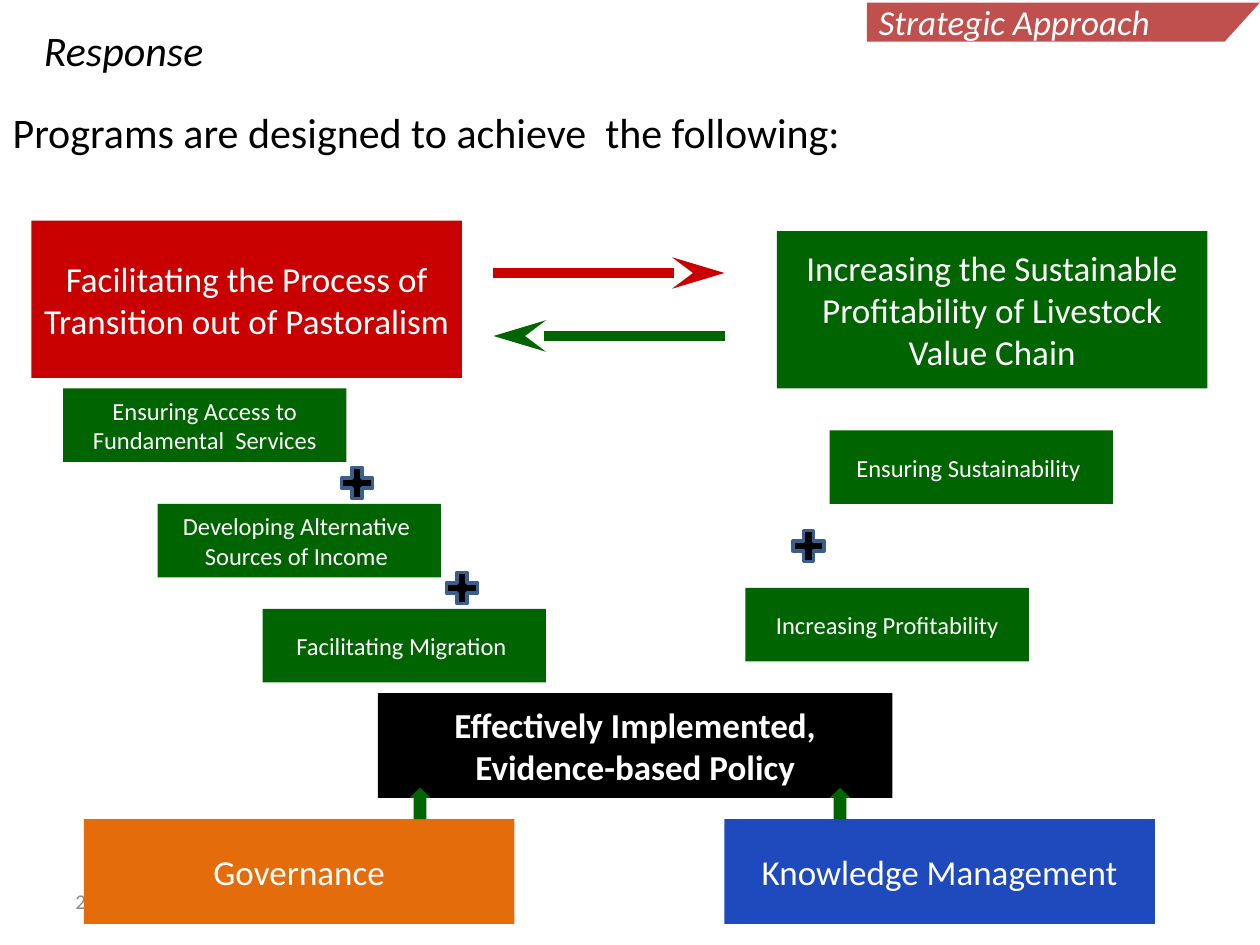
from lxml import etree
from pptx import Presentation
from pptx.dml.color import RGBColor
from pptx.enum.shapes import MSO_CONNECTOR, MSO_SHAPE
from pptx.enum.text import MSO_ANCHOR, PP_ALIGN
from pptx.oxml.ns import qn
from pptx.util import Inches, Pt

RECT, PLUS, LEFT_ARROW = MSO_SHAPE.RECTANGLE, MSO_SHAPE.MATH_PLUS, MSO_SHAPE.LEFT_ARROW
MIDDLE, TOP = MSO_ANCHOR.MIDDLE, MSO_ANCHOR.TOP
LEFT, CENTER = PP_ALIGN.LEFT, PP_ALIGN.CENTER

COLORS = {"black": "000000", "white": "FFFFFF", "gray": "8C8C8C", "ribbon": "C0504D",
          "blue": "1E4ABD", "orange": "E46C0A", "red": "C80000", "green": "006400",
          "outline": "3A5F8C"}

# Places are in cells of a 120 x 90 grid, 12 cells to the inch.
GRID = 12
TITLE = "Programs are designed to achieve  the following:"
BIG, GOAL, SMALL = (41, 10), (41, 15), (27, 7)
BOXES = [  # text, column, row, size, fill, font
    ("Effectively Implemented, Evidence-based Policy", 36, 66, (49, 10), "black",
     {"size": Pt(20), "bold": True}),
    ("Knowledge Management", 69, 78, BIG, "blue", {"size": Pt(20)}),
    ("Governance", 8, 78, BIG, "orange", {"size": Pt(20)}),
    ("Facilitating the Process of Transition out of Pastoralism", 3, 21, GOAL, "red",
     {"size": Pt(20)}),
    ("Increasing the Sustainable Profitability of Livestock Value Chain", 74, 22, GOAL,
     "green", {"size": Pt(20)}),
]
STEPS = [
    ("Ensuring Sustainability ", 79, 41),
    ("Increasing Profitability", 71, 56),
    ("Facilitating Migration ", 25, 58),
    ("Developing Alternative  Sources of Income ", 15, 48),
    ("Ensuring Access to Fundamental  Services", 6, 37),
]
EXCHANGES = [("green", 69, 47, 32), ("red", 47, 69, 26)]  # colour, start, end, row
PLUSES = [(32, 44), (42, 54), (75, 50)]
SUPPORTS = [80, 40]  # centre columns of the upward arrows


def g(cells):
    return Inches(cells / GRID)


def rgb(name):
    return RGBColor.from_string(COLORS[name])


def write(sp, text, color, align=LEFT, anchor=MIDDLE, **font):
    tf = sp.text_frame
    tf.word_wrap = True
    tf.vertical_anchor = anchor
    p = tf.paragraphs[0]
    p.alignment = align
    r = p.add_run()
    r.text = text
    r.font.name = "Calibri"
    r.font.color.rgb = rgb(color)
    for key, value in font.items():
        setattr(r.font, key, value)


def label(s, text, box, color, **fmt):
    write(s.shapes.add_textbox(*map(g, box)), text, color, **fmt)


def paint(sp, fill, line=None):
    """Flat fill, optional 2 pt outline, no shadow."""
    sp.shadow.inherit = False
    sp.fill.solid()
    sp.fill.fore_color.rgb = rgb(fill)
    if line:
        sp.line.color.rgb = rgb(line)
        sp.line.width = Pt(2)
    else:
        sp.line.fill.background()


def add_shape(s, kind, col, row, size, fill, line=None):
    sp = s.shapes.add_shape(kind, *map(g, (col, row, *size)))
    paint(sp, fill, line)
    return sp


def add_arrow(s, color, start, end, row):
    cx = s.shapes.add_connector(MSO_CONNECTOR.STRAIGHT, g(start), g(row), g(end), g(row))
    cx.line.color.rgb = rgb(color)
    cx.line.width = Pt(6)
    etree.SubElement(cx.line._get_or_add_ln(), qn("a:tailEnd"), type="stealth", w="med", len="lg")
    etree.SubElement(cx._element.spPr, qn("a:effectLst"))


def main():
    prs = Presentation()
    prs.slide_width, prs.slide_height = Inches(10), Inches(7.5)
    s = prs.slides.add_slide(prs.slide_layouts[5])

    title = s.shapes.title
    title.left, title.top, title.width, title.height = map(g, (0, 8, 104, 9))
    write(title, TITLE, "black", size=Pt(24))
    label(s, "23", (6, 83.4, 28, 4.8), "gray", size=Pt(12))

    fb = s.shapes.build_freeform(Inches(10), Inches(0.02), scale=1.0)
    corners = [(9.72, 0.33), (6.88, 0.33), (6.88, 0.02)]
    fb.add_line_segments([(Inches(x), Inches(y)) for x, y in corners], close=True)
    paint(fb.convert_to_shape(), "ribbon")
    label(s, "Strategic Approach", (82.5, -0.5, 29, 5.25), "white", anchor=TOP,
          size=Pt(20), italic=True)

    steps = [(*step, SMALL, "green", {"size": Pt(14)}) for step in STEPS]
    for text, col, row, size, fill, font in BOXES + steps:
        write(add_shape(s, RECT, col, row, size, fill), text, "white", CENTER, **font)

    for exchange in EXCHANGES:
        add_arrow(s, *exchange)
    for col, row in PLUSES:
        add_shape(s, PLUS, col, row, (4, 4), "black", "outline")
    for center in SUPPORTS:
        sp = add_shape(s, LEFT_ARROW, center - 1.5, 75.5, (3, 2), "green")
        sp.rotation = 90
        sp.adjustments[0] = 0.6

    label(s, "Response", (3, 1.7, 37, 6), "black", anchor=TOP, size=Pt(24), italic=True)
    prs.save("out.pptx")


if __name__ == "__main__":
    main()
